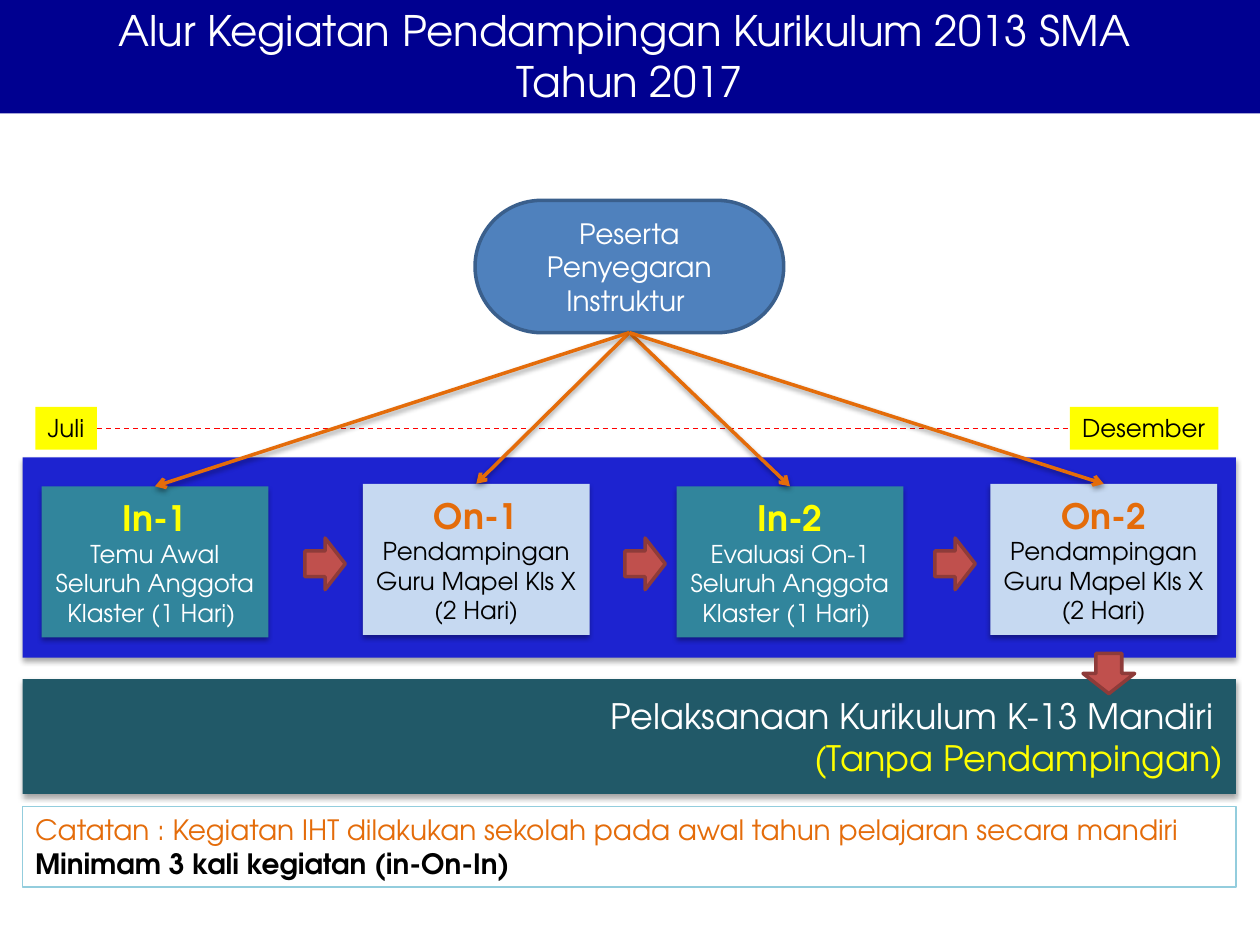
from dataclasses import dataclass

import pptx
import pptx.dml.color
import pptx.enum.dml
import pptx.enum.shapes
import pptx.enum.text
import pptx.oxml
import pptx.oxml.ns
import pptx.util
from pptx.util import Inches

FONT = "TeX Gyre Adventor"
KIND = pptx.enum.shapes.MSO_SHAPE
ALIGN = pptx.enum.text.PP_ALIGN
ANCHOR = pptx.enum.text.MSO_ANCHOR
FIT = pptx.enum.text.MSO_AUTO_SIZE
WHITE, BLACK, YELLOW, ORANGE = "FFFFFF", "000000", "FFFF00", "E46C0A"


@dataclass
class Line:
    text: str
    size: float
    color: str = WHITE
    bold: bool = False


@dataclass
class Box:
    left: float
    top: float
    width: float
    height: float
    fill: str | None = None
    edge: str | None = None
    weight: float = 2
    kind: int = KIND.RECTANGLE
    shade: bool = False
    turn: float = 0
    lines: tuple[Line, ...] = ()
    align: int = ALIGN.CENTER
    anchor: int = ANCHOR.MIDDLE
    wrap: bool = True
    grow: bool = False


@dataclass
class Step:
    left: float
    top: float
    fill: str
    head: Line
    body: tuple[Line, ...]


def rgb(code: str) -> pptx.dml.color.RGBColor:
    return pptx.dml.color.RGBColor.from_string(code)


def apply(target, values: dict) -> None:
    for name, value in values.items():
        setattr(target, name, value)


def add_shade(props, alpha: int, dist: float) -> None:
    """Put a soft black shadow below a shape or line."""
    effect = props.find(pptx.oxml.ns.qn("a:effectLst"))
    effect.append(pptx.oxml.parse_xml(
        f'<a:outerShdw {pptx.oxml.ns.nsdecls("a")} blurRad="{pptx.util.Pt(3.1)}" '
        f'dist="{pptx.util.Pt(dist)}" dir="5400000" rotWithShape="0">'
        f'<a:srgbClr val="000000"><a:alpha val="{alpha * 1000}"/></a:srgbClr>'
        '</a:outerShdw>'))


def write(frame, box: Box) -> None:
    apply(frame, {
        "word_wrap": box.wrap,
        "auto_size": FIT.SHAPE_TO_FIT_TEXT if box.grow else FIT.NONE,
        "vertical_anchor": box.anchor,
    })
    for i, line in enumerate(box.lines):
        para = frame.add_paragraph() if i else frame.paragraphs[0]
        para.alignment = box.align
        run = para.add_run()
        run.text = line.text
        apply(run.font, {"name": FONT, "size": pptx.util.Pt(line.size),
                         "bold": line.bold})
        run.font.color.rgb = rgb(line.color)


def add_box(slide, box: Box):
    place = map(Inches, (box.left, box.top, box.width, box.height))
    shape = slide.shapes.add_shape(box.kind, *place)
    shape.rotation = box.turn
    if box.fill:
        shape.fill.solid()
        shape.fill.fore_color.rgb = rgb(box.fill)
    else:
        shape.fill.background()
    if box.edge:
        shape.line.color.rgb = rgb(box.edge)
        shape.line.width = pptx.util.Pt(box.weight)
    else:
        shape.line.fill.background()
    shape.shadow.inherit = False
    if box.shade:
        add_shade(shape.element.spPr, 35, 1.8)
    if box.lines:
        write(shape.text_frame, box)
    return shape


def join(slide, start, out: int, end, into: int, color: str, weight: float):
    link = slide.shapes.add_connector(
        pptx.enum.shapes.MSO_CONNECTOR.STRAIGHT, 0, 0, 0, 0)
    link.begin_connect(start, out)
    link.end_connect(end, into)
    link.line.color.rgb = rgb(color)
    link.line.width = pptx.util.Pt(weight)
    props = link.element.spPr
    props.append(pptx.oxml.parse_xml(
        f'<a:effectLst {pptx.oxml.ns.nsdecls("a")}/>'))
    add_shade(props, 38, 1.6)
    return link


def add_head(link) -> None:
    link.line.fill.solid()
    link.element.spPr.find(pptx.oxml.ns.qn("a:ln")).append(
        pptx.oxml.parse_xml(
            f'<a:tailEnd {pptx.oxml.ns.nsdecls("a")} type="arrow"/>'))


def add_arrow(slide, left: float, top: float, turn: float = 0) -> None:
    add_box(slide, Box(left, top, 0.32, 0.41, "C0504D", "8E3B39",
                       kind=KIND.RIGHT_ARROW, turn=turn))


def in_step(left: float, name: str, text: str) -> Step:
    return Step(left, 3.86, "31859C", Line(name, 20, YELLOW, True),
                (Line(text, 14),))


def on_step(left: float, name: str) -> Step:
    return Step(left, 3.84, "C6D9F1", Line(name, 20, ORANGE, True),
                (Line("Pendampingan Guru Mapel Kls X", 14, BLACK),
                 Line("(2 Hari)", 14, BLACK)))


def tag(slide, left: float, width: float, text: str):
    return add_box(slide, Box(left, 3.23, width, 0.34, YELLOW,
                              lines=(Line(text, 14, BLACK),), align=ALIGN.LEFT,
                              anchor=ANCHOR.TOP, wrap=False, grow=True))


def main() -> None:
    deck = pptx.Presentation()
    apply(deck, {"slide_width": Inches(10), "slide_height": Inches(7.5)})
    slide = deck.slides.add_slide(deck.slide_layouts[6])

    # Band with the four steps
    add_box(slide, Box(0.18, 3.63, 9.63, 1.59, "1D23D0", shade=True))
    steps = (
        in_step(0.33, "In-1", "Temu Awal Seluruh Anggota Klaster (1 Hari) "),
        on_step(2.88, "On-1"),
        in_step(5.37, "In-2", "Evaluasi On-1 Seluruh Anggota Klaster (1 Hari) "),
        on_step(7.86, "On-2"),
    )
    cards = [add_box(slide, Box(s.left, s.top, 1.8, 1.2, s.fill, shade=True,
                                lines=(s.head, *s.body))) for s in steps]
    for left in (2.42, 4.96, 7.42):
        add_arrow(slide, left, 4.27)

    # Independent phase
    add_box(slide, Box(0.18, 5.39, 9.63, 0.91, "215968", shade=True,
                       lines=(Line("Pelaksanaan Kurikulum K-13 Mandiri ", 20),
                              Line("(Tanpa Pendampingan)", 20, YELLOW)),
                       align=ALIGN.RIGHT))
    add_arrow(slide, 8.64, 5.14, 90)

    # Title
    add_box(slide, Box(0, -0.01, 10, 0.91, "000090", anchor=ANCHOR.TOP, grow=True,
                       lines=(Line("Alur Kegiatan Pendampingan Kurikulum 2013 SMA ", 24),
                              Line("Tahun 2017", 24))))

    # Time span
    first = tag(slide, 0.28, 0.49, "Juli")
    last = tag(slide, 8.49, 1.18, "Desember")
    span = join(slide, first, 3, last, 1, "FF0000", 0.75)
    span.line.dash_style = pptx.enum.dml.MSO_LINE.DASH

    # Participants and their links to the steps
    pill = add_box(slide, Box(3.77, 1.59, 2.45, 1.05, "4F81BD", "3A5F8C",
                              kind=KIND.ROUNDED_RECTANGLE,
                              lines=(Line("Peserta Penyegaran", 16),
                                     Line("Instruktur ", 16))))
    pill.adjustments[0] = 0.5
    for card in cards:
        add_head(join(slide, pill, 2, card, 0, ORANGE, 2))

    # Note
    note = ("Catatan : Kegiatan IHT dilakukan sekolah pada awal tahun "
            "pelajaran secara mandiri")
    add_box(slide, Box(0.18, 6.4, 9.63, 0.64, None, "93CDDD", 0.75,
                       lines=(Line(note, 16, ORANGE),
                              Line("Minimam 3 kali kegiatan (in-On-In)", 16,
                                   BLACK, True)),
                       align=ALIGN.LEFT, anchor=ANCHOR.TOP, grow=True))

    deck.save("out.pptx")


if __name__ == "__main__":
    main()
